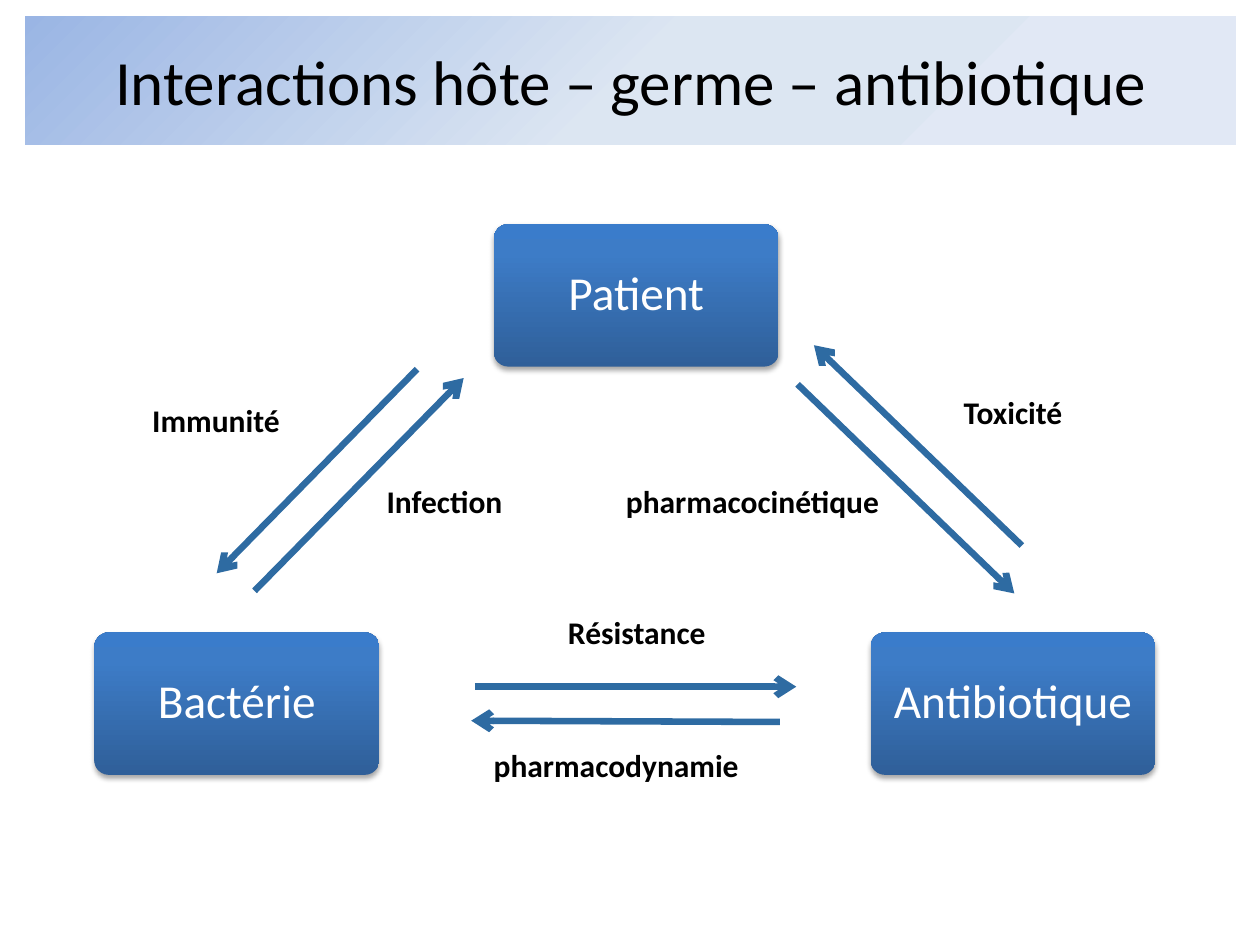
from copy import deepcopy

from lxml.etree import SubElement
from pptx import Presentation
from pptx.dml.color import RGBColor
from pptx.enum.shapes import MSO_CONNECTOR as Connector, MSO_SHAPE as Shape
from pptx.enum.text import MSO_ANCHOR as Anchor, MSO_AUTO_SIZE as AutoSize, PP_ALIGN as Align
from pptx.oxml.ns import qn
from pptx.util import Inches, Pt

FONT = "Calibri"
BAND_STOPS = [(0, "9AB5E4"), (0.5, "DCE6F2"), (1, "E1E8F5")]
BOX_STOPS = [(0, "2F5F99"), (0.8, "3D7CC7"), (1, "3A7CCB")]

BOX_SIZE = (2.26, 1.13)
BOXES = [("Patient", 3.92, 1.78), ("Antibiotique", 6.91, 5.02), ("Bactérie", 0.75, 5.02)]
ARROWS = [
    (3.31, 2.93, 1.72, 4.55), (2.02, 4.69, 3.68, 3),        # patient and bacterium
    (8.11, 4.33, 6.46, 2.74), (6.33, 3.05, 8.05, 4.71),     # patient and antibiotic
    (6.19, 5.73, 3.74, 5.72), (3.77, 5.45, 6.32, 5.45),     # bacterium and antibiotic
]
LABELS = [
    ("Immunité", 1.11, 3.13, 1.22), ("Infection", 2.97, 3.78, 1.13),
    ("pharmacocinétique", 4.87, 3.78, 2.23), ("Toxicité", 7.55, 3.07, 0.99),
    ("Résistance", 4.41, 4.82, 1.3), ("pharmacodynamie", 3.82, 5.87, 2.16),
]


def colour(hex_value):
    return RGBColor.from_string(hex_value)


def set_all(target, **values):
    for name, value in values.items():
        setattr(target, name, value)


def inches(*lengths):
    return [Inches(length) for length in lengths]


def write(shape, text, size, hex_value, bold=False):
    paragraph = shape.text_frame.paragraphs[0]
    run = paragraph.add_run()
    run.text = text
    set_all(run.font, name=FONT, size=Pt(size), bold=bold)
    run.font.color.rgb = colour(hex_value)
    return paragraph


def fill_gradient(shape, stops, angle):
    """Fill with a three-stop gradient; the angle runs counter-clockwise."""
    shape.fill.gradient()
    shape.fill.gradient_angle = angle
    stop_list = shape.fill._xPr.find(".//" + qn("a:gsLst"))
    stop_list.append(deepcopy(stop_list[0]))
    for stop, (position, hex_value) in zip(shape.fill.gradient_stops, stops):
        stop.position = position
        stop.color.rgb = colour(hex_value)


def add_soft_shadow(shape):
    shape.shadow.inherit = False
    effects = shape._element.spPr.find(qn("a:effectLst"))
    shadow = SubElement(effects, qn("a:outerShdw"), blurRad=str(Pt(3.1)),
                        dist=str(Pt(1.8)), dir="5400000", rotWithShape="0")
    tone = SubElement(shadow, qn("a:srgbClr"), val="000000")
    SubElement(tone, qn("a:alpha"), val="35000")


def place_title(slide, left, top, width, height):
    title = slide.shapes.title
    set_all(title, left=Inches(left), top=Inches(top),
            width=Inches(width), height=Inches(height))
    fill_gradient(title, BAND_STOPS, 315)
    title.text_frame.vertical_anchor = Anchor.MIDDLE
    paragraph = write(title, "Interactions hôte – germe – antibiotique", 36, "000000")
    paragraph.alignment = Align.CENTER


def add_box(slide, text, left, top, width, height):
    box = slide.shapes.add_shape(Shape.ROUNDED_RECTANGLE, *inches(left, top, width, height))
    box.adjustments[0] = 0.1
    fill_gradient(box, BOX_STOPS, 90)
    box.line.fill.background()
    add_soft_shadow(box)
    margin = Inches(0.15)
    set_all(box.text_frame, word_wrap=True, vertical_anchor=Anchor.MIDDLE,
            margin_left=margin, margin_right=margin, margin_top=margin, margin_bottom=margin)
    paragraph = write(box, text, 27, "FFFFFF")
    set_all(paragraph, alignment=Align.CENTER, line_spacing=0.9)


def add_arrow(slide, start_x, start_y, end_x, end_y):
    arrow = slide.shapes.add_connector(
        Connector.STRAIGHT, *inches(start_x, start_y, end_x, end_y))
    arrow.line.width = Pt(3.75)
    arrow.line.color.rgb = colour("2E6BA2")
    SubElement(arrow.line._get_or_add_ln(), qn("a:tailEnd"), type="arrow")
    SubElement(arrow._element.spPr, qn("a:effectLst"))


def add_label(slide, text, left, top, width, height=0.4):
    label = slide.shapes.add_textbox(*inches(left, top, width, height))
    set_all(label.text_frame, word_wrap=False, auto_size=AutoSize.SHAPE_TO_FIT_TEXT)
    write(label, text, 18, "000000", bold=True)


def main():
    presentation = Presentation()
    set_all(presentation, slide_width=Inches(10), slide_height=Inches(7.5))
    slide = presentation.slides.add_slide(presentation.slide_layouts[5])

    # Title band
    place_title(slide, 0.2, 0.13, 9.61, 1.02)

    # Triangle of actors, linked by pairs of labelled arrows
    for text, left, top in BOXES:
        add_box(slide, text, left, top, *BOX_SIZE)
    for ends in ARROWS:
        add_arrow(slide, *ends)
    for label in LABELS:
        add_label(slide, *label)

    presentation.save("out.pptx")


if __name__ == "__main__":
    main()
